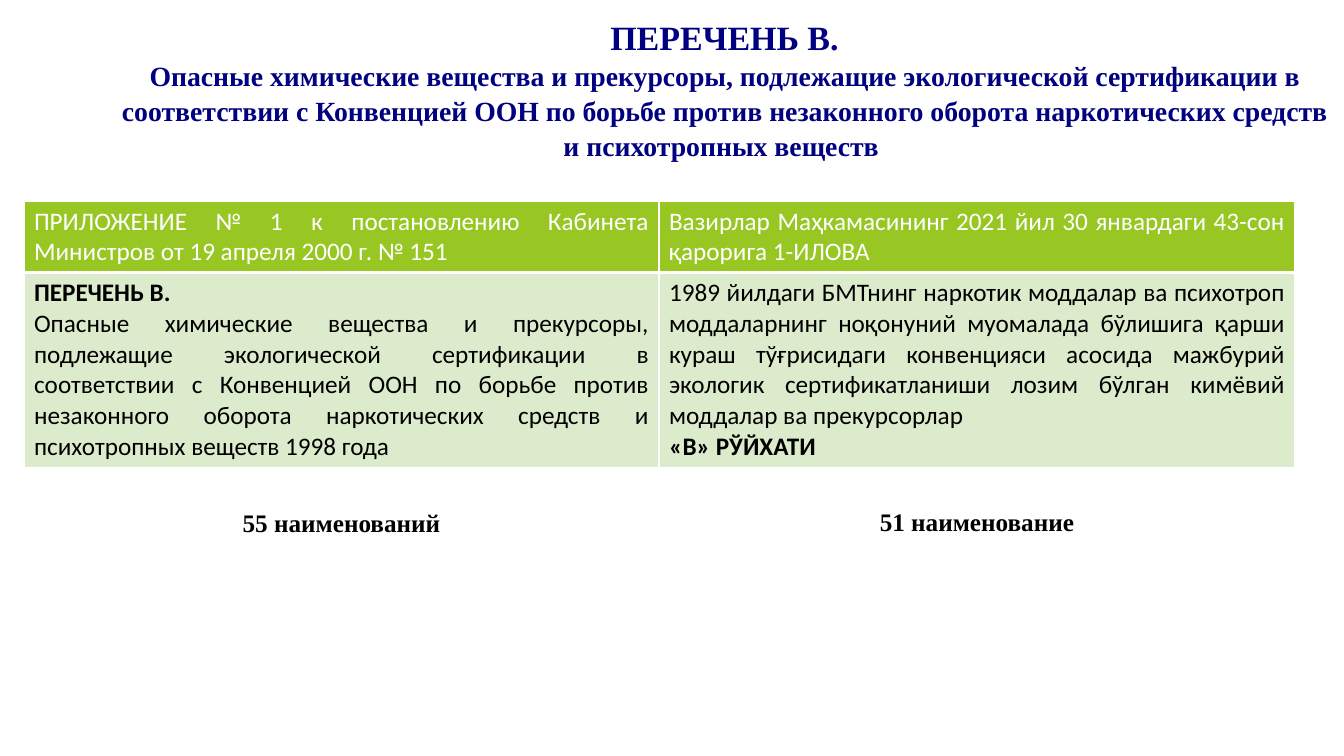
from lxml.etree import SubElement
from pptx import Presentation
from pptx.dml.color import RGBColor as Rgb
from pptx.enum.text import MSO_ANCHOR as Anchor, MSO_AUTO_SIZE as Auto, PP_ALIGN as Align
from pptx.oxml.ns import qn
from pptx.util import Emu, Pt

COLORS = {"navy": "000080", "white": "FFFFFF", "black": "000000",
          "green": "98C723", "pale": "DDEBCD"}
SERIF, SANS = "Times New Roman", "Calibri"

TITLE = ("ПЕРЕЧЕНЬ В.\nОпасные химические вещества и прекурсоры, подлежащие "
         "экологической сертификации в соответствии с Конвенцией ООН по борьбе "
         "против незаконного оборота наркотических средств и психотропных веществ ")
HEADS = [
    "ПРИЛОЖЕНИЕ № 1 к постановлению Кабинета Министров от 19 апреля 2000 г. № 151",
    "Вазирлар Маҳкамасининг 2021 йил 30 январдаги 43-сон қарорига 1-ИЛОВА",
]
LISTS = [
    ["ПЕРЕЧЕНЬ В.",
     "Опасные химические вещества и прекурсоры, подлежащие экологической "
     "сертификации в соответствии с Конвенцией ООН по борьбе против незаконного "
     "оборота наркотических средств и психотропных веществ 1998 года"],
    ["1989 йилдаги БМТнинг наркотик моддалар ва психотроп моддаларнинг ноқонуний "
     "муомалада бўлишига қарши кураш тўғрисидаги конвенцияси асосида мажбурий "
     "экологик сертификатланиши лозим бўлган кимёвий моддалар ва прекурсорлар\n"
     "«В» РЎЙХАТИ"],
]
COUNTS = ["55 наименований", "51 наименование"]
BOLD = {"ПЕРЕЧЕНЬ В.", "«В» РЎЙХАТИ", *COUNTS}

TITLE_BOX = (105, 13, 1239, 150)
TABLE_BOX = (24, 201, 1271, 433)
COLS = [635, 636]
ROWS = [70, 195, 41, 87, 40]


def px(n):
    return Emu(n * 914400 * 10 // 1008)


def style(run, font, size, color, bold):
    run.font.name = font
    run.font.size = Pt(size)
    run.font.bold = bold
    run.font.color.rgb = Rgb.from_string(COLORS[color])


def border(cell, foot):
    props = cell._tc.get_or_add_tcPr()
    for at, (side, width) in enumerate(zip("LRTB", (1, 1, 1, foot))):
        line = props.makeelement(qn(f"a:ln{side}"), {"w": str(Pt(width))})
        fill = SubElement(line, qn("a:solidFill"))
        SubElement(fill, qn("a:srgbClr"), val=COLORS["white"])
        props.insert(at, line)


def write(cell, lines, font, color, align):
    cell.text_frame.text = lines[0]
    for line in lines[1:]:
        cell.text_frame.add_paragraph().text = line
    for para in cell.text_frame.paragraphs:
        para.alignment = align
        for run in para.runs:
            style(run, font, 18, color, run.text in BOLD)


def add_title(slide):
    title = slide.shapes.title
    title.left, title.top, title.width, title.height = map(px, TITLE_BOX)
    frame = title.text_frame
    frame.word_wrap = True
    frame.auto_size = Auto.NONE
    frame.vertical_anchor = Anchor.MIDDLE
    para = frame.paragraphs[0]
    para.text = TITLE
    para.alignment = Align.CENTER
    para.line_spacing = 1.05
    for run, size in zip(para.runs, (24.3, 19.8)):
        style(run, SERIF, size, "navy", True)


def add_grid(slide):
    table = slide.shapes.add_table(len(ROWS), len(COLS), *map(px, TABLE_BOX)).table
    table.first_row = table.horz_banding = False
    for col, width in zip(table.columns, COLS):
        col.width = px(width)
    for row, height in zip(table.rows, ROWS):
        row.height = px(height)
    fills = {0: "green", 1: "pale"}
    for r in range(len(ROWS)):
        for c in range(len(COLS)):
            cell = table.cell(r, c)
            if r in fills:
                cell.fill.solid()
                cell.fill.fore_color.rgb = Rgb.from_string(COLORS[fills[r]])
            else:
                cell.fill.background()
            border(cell, 1 if r else 3)
    for c in range(len(COLS)):
        write(table.cell(0, c), [HEADS[c]], SANS, "white", Align.JUSTIFY)
        write(table.cell(1, c), LISTS[c], SANS, "black", Align.JUSTIFY)
        cell = table.cell(3, c)
        cell.margin_left = cell.margin_right = px((2, 4)[c])
        cell.margin_top = cell.margin_bottom = px((1, 0)[c])
        write(cell, [COUNTS[c]], SERIF, "black", Align.CENTER)
    for r in (2, 4):
        table.cell(r, 0).merge(table.cell(r, 1))


def main():
    deck = Presentation()
    deck.slide_width, deck.slide_height = px(1344), px(756)
    slide = deck.slides.add_slide(deck.slide_layouts[5])
    add_title(slide)
    add_grid(slide)
    deck.save("out.pptx")


if __name__ == "__main__":
    main()
